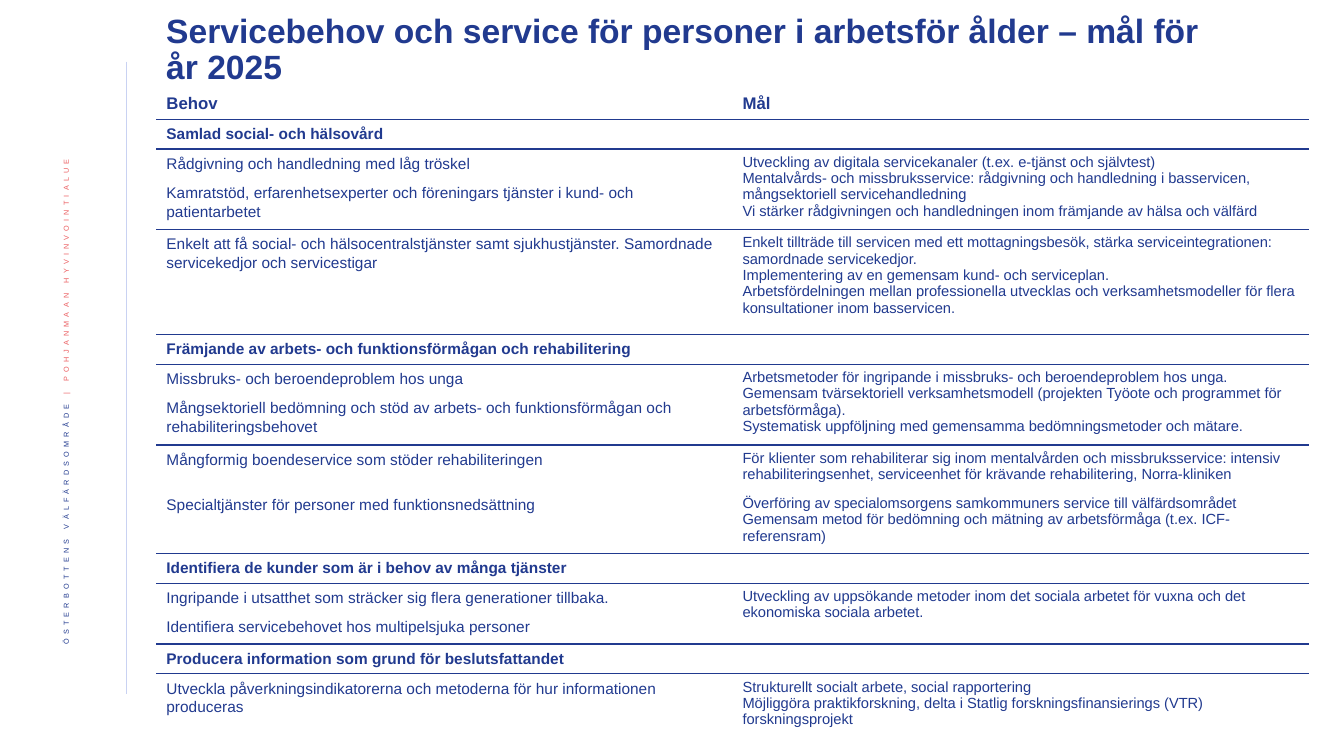
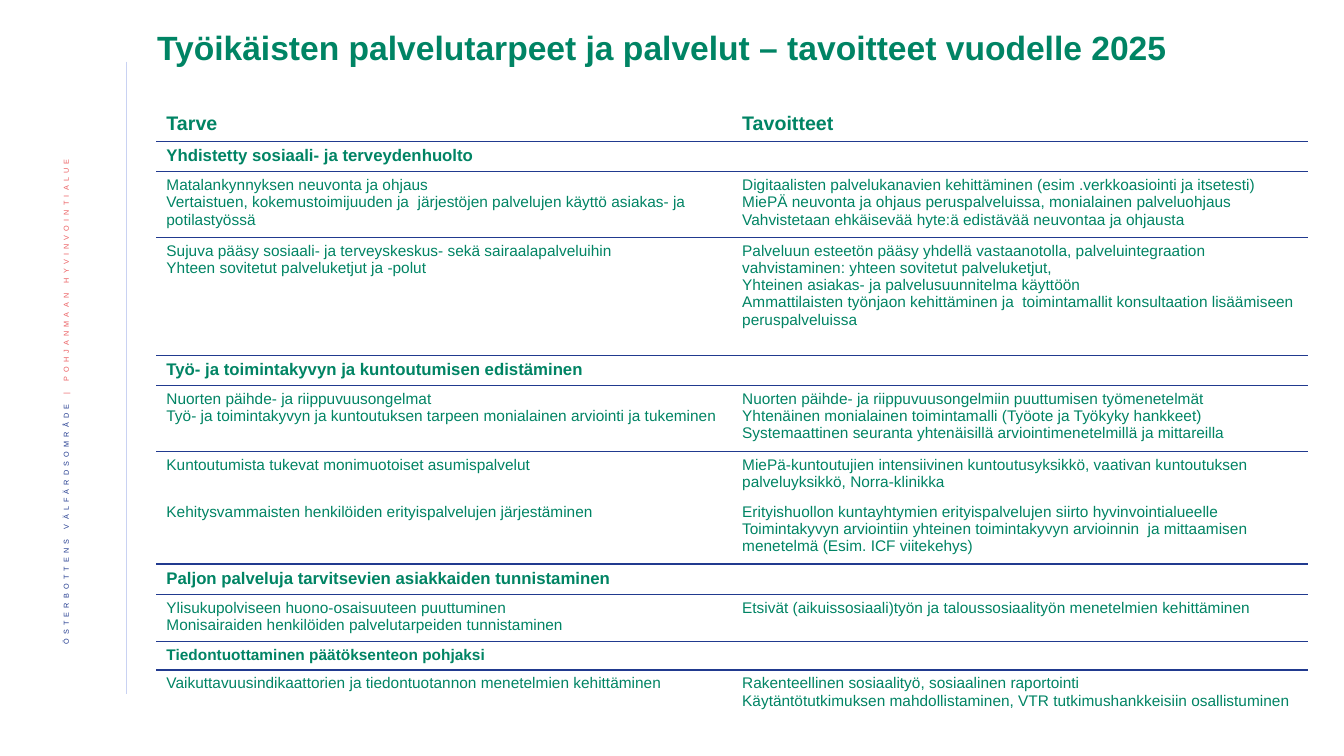
from lxml.etree import SubElement
from pptx import Presentation
from pptx.dml.color import RGBColor
from pptx.enum.shapes import MSO_CONNECTOR as Connector
from pptx.enum.text import MSO_ANCHOR as Anchor, PP_ALIGN as Align
from pptx.oxml import parse_xml
from pptx.oxml.ns import nsdecls, qn
from pptx.util import Cm, Pt

BLUE = RGBColor(0x21, 0x3A, 0x8F)
GREEN = RGBColor(0x00, 0x84, 0x64)
CORAL = RGBColor(0xEB, 0x5C, 0x5F)
PALE_BLUE = RGBColor(0xC9, 0xD2, 0xF2)
FONT = "Arial"
PLAIN_TABLE = "{2D5ABB26-0587-4C30-8999-92F81FD0307C}"

# Each section: heading, then rows of (needs, goals)
SWEDISH = [
    ("Samlad social- och hälsovård", [
        (["Rådgivning och handledning med låg tröskel",
          "Kamratstöd, erfarenhetsexperter och föreningars tjänster i kund- och patientarbetet"],
         ["Utveckling av digitala servicekanaler (t.ex. e-tjänst och självtest)",
          "Mentalvårds- och missbruksservice: rådgivning och handledning i basservicen, "
          "mångsektoriell servicehandledning",
          "Vi stärker rådgivningen och handledningen inom främjande av hälsa och välfärd"]),
        (["Enkelt att få social- och hälsocentralstjänster samt sjukhustjänster. "
          "Samordnade servicekedjor och servicestigar"],
         ["Enkelt tillträde till servicen med ett mottagningsbesök, stärka "
          "serviceintegrationen: samordnade servicekedjor.",
          "Implementering av en gemensam kund- och serviceplan.",
          "Arbetsfördelningen mellan professionella utvecklas och verksamhetsmodeller "
          "för flera konsultationer inom basservicen."]),
    ]),
    ("Främjande av arbets- och funktionsförmågan och rehabilitering", [
        (["Missbruks- och beroendeproblem hos unga",
          "Mångsektoriell bedömning och stöd av arbets- och funktionsförmågan och "
          "rehabiliteringsbehovet"],
         ["Arbetsmetoder för ingripande i missbruks- och beroendeproblem hos unga.",
          "Gemensam tvärsektoriell verksamhetsmodell (projekten Työote och programmet "
          "för arbetsförmåga).",
          "Systematisk uppföljning med gemensamma bedömningsmetoder och mätare."]),
        (["Mångformig boendeservice som stöder rehabiliteringen"],
         ["För klienter som rehabiliterar sig inom mentalvården och missbruksservice: "
          "intensiv rehabiliteringsenhet, serviceenhet för krävande rehabilitering, "
          "Norra-kliniken"]),
        (["Specialtjänster för personer med funktionsnedsättning"],
         ["Överföring av specialomsorgens samkommuners service till välfärdsområdet",
          "Gemensam metod för bedömning och mätning av arbetsförmåga (t.ex. ICF-referensram)"]),
    ]),
    ("Identifiera de kunder som är i behov av många tjänster", [
        (["Ingripande i utsatthet som sträcker sig flera generationer tillbaka.",
          "Identifiera servicebehovet hos multipelsjuka personer"],
         ["Utveckling av uppsökande metoder inom det sociala arbetet för vuxna och det "
          "ekonomiska sociala arbetet."]),
    ]),
    ("Producera information som grund för beslutsfattandet", [
        (["Utveckla påverkningsindikatorerna och metoderna för hur informationen produceras"],
         ["Strukturellt socialt arbete, social rapportering",
          "Möjliggöra praktikforskning, delta i Statlig forskningsfinansierings (VTR) "
          "forskningsprojekt"]),
    ]),
]

FINNISH = [
    ("Yhdistetty sosiaali- ja terveydenhuolto", [
        (["Matalankynnyksen neuvonta ja ohjaus",
          "Vertaistuen, kokemustoimijuuden ja  järjestöjen palvelujen käyttö asiakas- ja "
          "potilastyössä"],
         ["Digitaalisten palvelukanavien kehittäminen (esim .verkkoasiointi ja itsetesti)",
          "MiePÄ neuvonta ja ohjaus peruspalveluissa, monialainen palveluohjaus",
          "Vahvistetaan ehkäisevää hyte:ä edistävää neuvontaa ja ohjausta"]),
        (["Sujuva pääsy sosiaali- ja terveyskeskus- sekä sairaalapalveluihin",
          "Yhteen sovitetut palveluketjut ja -polut"],
         ["Palveluun esteetön pääsy yhdellä vastaanotolla, palveluintegraation "
          "vahvistaminen: yhteen sovitetut palveluketjut,",
          "Yhteinen asiakas- ja palvelusuunnitelma käyttöön",
          "Ammattilaisten työnjaon kehittäminen ja  toimintamallit konsultaation "
          "lisäämiseen peruspalveluissa"]),
    ]),
    ("Työ- ja toimintakyvyn ja kuntoutumisen edistäminen", [
        (["Nuorten päihde- ja riippuvuusongelmat",
          "Työ- ja toimintakyvyn ja kuntoutuksen tarpeen monialainen arviointi ja tukeminen"],
         ["Nuorten päihde- ja riippuvuusongelmiin puuttumisen työmenetelmät",
          "Yhtenäinen monialainen toimintamalli (Työote ja Työkyky hankkeet)",
          "Systemaattinen seuranta yhtenäisillä arviointimenetelmillä ja mittareilla"]),
        (["Kuntoutumista tukevat monimuotoiset asumispalvelut"],
         ["MiePä-kuntoutujien intensiivinen kuntoutusyksikkö, vaativan kuntoutuksen "
          "palveluyksikkö, Norra-klinikka"]),
        (["Kehitysvammaisten henkilöiden erityispalvelujen järjestäminen"],
         ["Erityishuollon kuntayhtymien erityispalvelujen siirto hyvinvointialueelle",
          "Toimintakyvyn arviointiin yhteinen toimintakyvyn arvioinnin  ja mittaamisen "
          "menetelmä (Esim. ICF viitekehys)"]),
    ]),
    ("Paljon palveluja tarvitsevien asiakkaiden tunnistaminen", [
        (["Ylisukupolviseen huono-osaisuuteen puuttuminen",
          "Monisairaiden henkilöiden palvelutarpeiden tunnistaminen"],
         ["Etsivät (aikuissosiaali)työn ja taloussosiaalityön menetelmien kehittäminen"]),
    ]),
    ("Tiedontuottaminen päätöksenteon pohjaksi", [
        (["Vaikuttavuusindikaattorien ja tiedontuotannon menetelmien kehittäminen"],
         ["Rakenteellinen sosiaalityö, sosiaalinen raportointi",
          "Käytäntötutkimuksen mahdollistaminen, VTR tutkimushankkeisiin osallistuminen"]),
    ]),
]


class Deck:
    def __init__(self):
        self.presentation = Presentation()
        self.presentation.slide_width = Cm(33.87)
        self.presentation.slide_height = Cm(19.05)
        self.slide = None
        self.color = BLUE

    def add_slide(self, color):
        self.slide = self.presentation.slides.add_slide(self.presentation.slide_layouts[6])
        self.color = color
        self.side_line()
        self.side_text()

    def run(self, paragraph, text, size, bold=False, color=None):
        run = paragraph.add_run()
        run.text = text
        run.font.name = FONT
        run.font.size = Pt(size)
        run.font.bold = bold
        run.font.color.rgb = color or self.color
        return run

    def text_box(self, left, top, width, height):
        frame = self.slide.shapes.add_textbox(
            Cm(left), Cm(top), Cm(width), Cm(height)).text_frame
        frame.word_wrap = True
        frame.vertical_anchor = Anchor.MIDDLE
        frame.paragraphs[0].line_spacing = 0.9
        return frame

    # Band at the left edge
    def side_line(self):
        line = self.slide.shapes.add_connector(
            Connector.STRAIGHT, Cm(3.18), Cm(1.55), Cm(3.18), Cm(17.48))
        line.line.color.rgb = PALE_BLUE
        line.line.width = Pt(0.5)
        SubElement(line._element.spPr, qn("a:effectLst"))

    def side_text(self):
        frame = self.text_box(1.07, 3.61, 1.32, 14.55)
        frame._txBody.bodyPr.set("vert", "vert270")
        paragraph = frame.paragraphs[0]
        paragraph.alignment = Align.RIGHT
        for text, color in (("ÖSTERBOTTENS VÄLFÄRDSOMRÅDE ", BLUE),
                            ("| POHJANMAAN HYVINVOINTIALUE ", CORAL)):
            properties = self.run(paragraph, text, 9, color=color).font._element
            properties.set("baseline", "30000")
            properties.set("spc", "300")

    def title(self, text, left, top):
        frame = self.text_box(left, top, 26.87, 1.9)
        self.run(frame.paragraphs[0], text, 24, bold=True)

    # Table parts
    def cell(self, cell, texts, size, bold=False, spaced=False, edges=()):
        frame = cell.text_frame
        for index, text in enumerate(texts):
            paragraph = frame.add_paragraph() if index else frame.paragraphs[0]
            if spaced:
                paragraph.line_spacing = 1.07
                paragraph.space_after = Pt(8)
            self.run(paragraph, text, size, bold)
        if not texts:
            SubElement(frame.paragraphs[0]._p, qn("a:endParaRPr"), sz=str(size * 100))
        for edge in edges:
            cell._tc.get_or_add_tcPr().append(parse_xml(
                f'<a:{edge} {nsdecls("a")} w="{Pt(1)}"><a:solidFill>'
                f'<a:srgbClr val="{BLUE}"/></a:solidFill></a:{edge}>'))
        cell.fill.background()

    def table(self, headers, sections, top, column_width, heights, header_size,
              heading_sizes, goal_size, spaced):
        table = self.slide.shapes.add_table(
            len(heights), 2, Cm(3.94), Cm(top),
            Cm(2 * column_width), Cm(sum(heights))).table
        table.first_row = table.horz_banding = False
        table._tbl.tblPr.find(qn("a:tableStyleId")).text = PLAIN_TABLE
        for column in table.columns:
            column.width = Cm(column_width)
        for row, height in zip(table.rows, heights):
            row.height = Cm(height)

        for column, header in enumerate(headers):
            self.cell(table.cell(0, column), [header], header_size, True, edges=["lnB"])
        row = 1
        for (heading, entries), size in zip(sections, heading_sizes):
            for column, texts in enumerate(([heading], [])):
                self.cell(table.cell(row, column), texts, size, True, spaced, ["lnT", "lnB"])
            for index, (needs, goals) in enumerate(entries, 1):
                edges = ["lnT"] if index == 1 else []
                if index == len(entries) and row + index < len(heights) - 1:
                    edges.append("lnB")
                self.cell(table.cell(row + index, 0), needs, 11, spaced=spaced, edges=edges)
                self.cell(table.cell(row + index, 1), goals, goal_size, edges=edges)
            row += len(entries) + 1


def row_heights(access_row):
    return [0.71, 0.74, 1.6, access_row, 0.74, 1.6, 1.14, 1.14, 0.74, 1.17, 0.71, 1.07]


def main():
    deck = Deck()

    # Swedish goals
    deck.add_slide(BLUE)
    deck.title("Servicebehov och service för personer i arbetsför ålder – mål för år 2025",
               3.94, 0.33)
    deck.table(("Behov", "Mål"), SWEDISH, top=2.24, column_width=14.52,
               heights=row_heights(2.64), header_size=12,
               heading_sizes=(11, 11, 11, 11), goal_size=10.5, spaced=True)

    # Finnish goals
    deck.add_slide(GREEN)
    deck.title("Työikäisten palvelutarpeet ja palvelut – tavoitteet vuodelle 2025", 3.71, 0.3)
    deck.table(("Tarve", "Tavoitteet"), FINNISH, top=2.72, column_width=14.51,
               heights=row_heights(2.97), header_size=14,
               heading_sizes=(12, 12, 12, 11), goal_size=11, spaced=False)

    deck.presentation.save("out.pptx")


if __name__ == "__main__":
    main()
